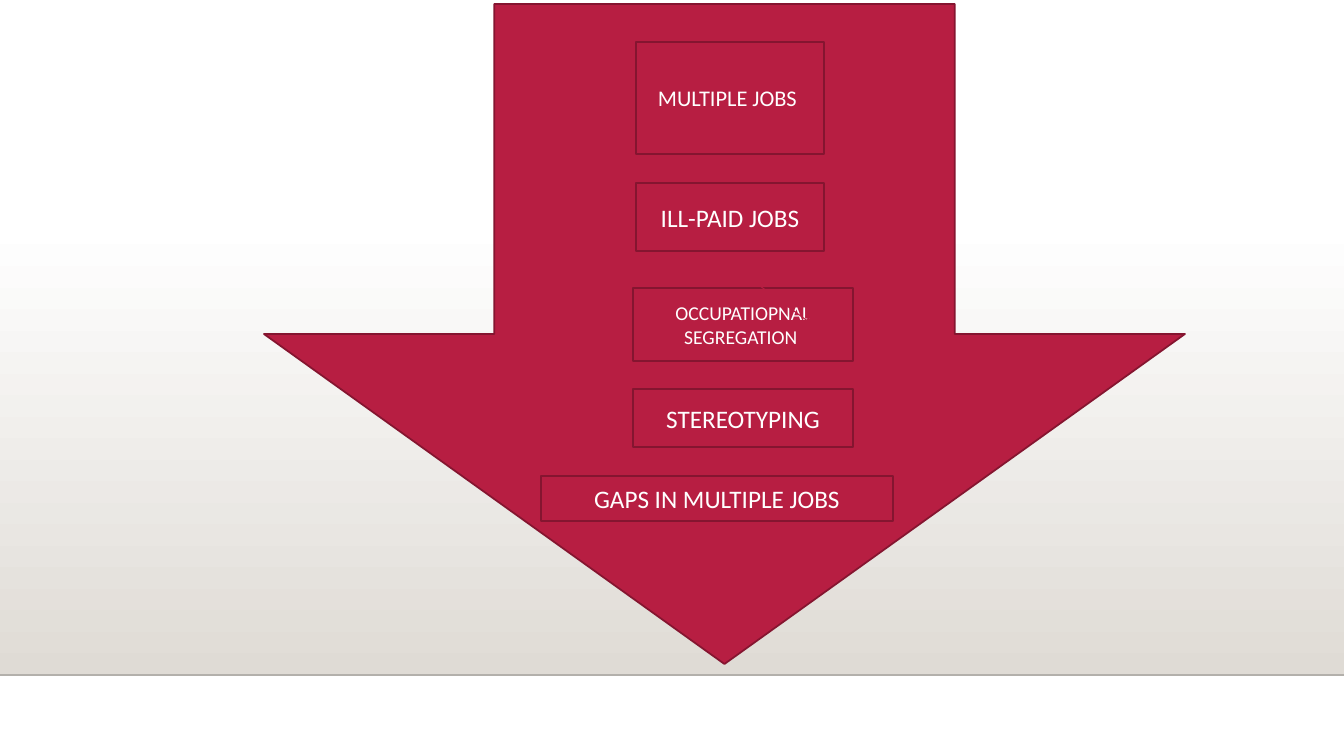
from lxml import etree
from pptx import Presentation
from pptx.dml.color import RGBColor
from pptx.enum.shapes import MSO_CONNECTOR, MSO_SHAPE
from pptx.enum.text import MSO_ANCHOR, PP_ALIGN
from pptx.oxml.ns import qn
from pptx.util import Emu, Pt

RECTANGLE = MSO_SHAPE.RECTANGLE
DOWN_ARROW = MSO_SHAPE.DOWN_ARROW
STRAIGHT = MSO_CONNECTOR.STRAIGHT
CENTER = PP_ALIGN.CENTER
MIDDLE = MSO_ANCHOR.MIDDLE

SLIDE_WIDTH, SLIDE_HEIGHT = 1344, 756
EMU_PER_PX = 12192000 / SLIDE_WIDTH
FLOOR_TOP, FLOOR_BOTTOM = 223, 675
FONT = "Calibri"
COLORS = {
    "white": "FFFFFF",
    "stone": "DFDBD5",
    "floor_edge": "B3B0AB",
    "crimson": "B71E42",
    "crimson_dark": "851530",
}
LOWER_LABELS = [
    ("OCCUPATIOPNAL SEGREGATION ", 14, (633, 288, 220, 73)),
    ("STEREOTYPING", 18, (633, 389, 220, 58)),
    ("GAPS IN MULTIPLE JOBS", 18, (541, 476, 352, 45)),
]
UPPER_LABELS = [
    ("ILL-PAID JOBS", 18, (636, 183, 188, 68)),
    ("MULTIPLE JOBS ", 16, (636, 42, 188, 112)),
]


def px(value):
    return Emu(round(value * EMU_PER_PX))


def color(name):
    return RGBColor.from_string(COLORS[name])


def add_backdrop(page):
    floor = page.shapes.add_shape(
        RECTANGLE, 0, px(FLOOR_TOP), px(SLIDE_WIDTH), px(FLOOR_BOTTOM - FLOOR_TOP)
    )
    floor.shadow.inherit = False
    floor.line.fill.background()
    floor.fill.gradient()
    floor.fill.gradient_angle = 270
    for stop, name in zip(floor.fill.gradient_stops, ("white", "stone")):
        stop.color.rgb = color(name)
    add_line(page, (0, FLOOR_BOTTOM), (SLIDE_WIDTH, FLOOR_BOTTOM), "floor_edge", 1)


def add_line(page, start, end, color_name, width):
    points = [px(value) for value in (*start, *end)]
    connector = page.shapes.add_connector(STRAIGHT, *points)
    connector.line.color.rgb = color(color_name)
    connector.line.width = Pt(width)
    etree.SubElement(connector._element.spPr, qn("a:effectLst"))
    return connector


def add_arrow_line(page, start, end, color_name, width):
    connector = add_line(page, start, end, color_name, width)
    outline = connector.line._get_or_add_ln()
    etree.SubElement(outline, qn("a:tailEnd"), type="triangle")


def add_crimson_shape(page, kind, bounds):
    shape = page.shapes.add_shape(kind, *[px(value) for value in bounds])
    shape.shadow.inherit = False
    shape.fill.solid()
    shape.fill.fore_color.rgb = color("crimson")
    shape.line.color.rgb = color("crimson_dark")
    shape.line.width = Pt(1.25)
    return shape


def add_label(page, text, size, bounds):
    box = add_crimson_shape(page, RECTANGLE, bounds)
    frame = box.text_frame
    frame.word_wrap = True
    frame.vertical_anchor = MIDDLE
    para = frame.paragraphs[0]
    para.text = text
    para.alignment = CENTER
    para.font.name = FONT
    para.font.size = Pt(size)
    para.font.color.rgb = color("white")


def main():
    deck = Presentation()
    deck.slide_width = px(SLIDE_WIDTH)
    deck.slide_height = px(SLIDE_HEIGHT)
    page = deck.slides.add_slide(deck.slide_layouts[6])
    add_backdrop(page)
    add_crimson_shape(page, DOWN_ARROW, (264, 4, 921, 660))
    for label in LOWER_LABELS:
        add_label(page, *label)
    add_arrow_line(page, (714, 252), (813, 325), "crimson", 0.75)
    for label in UPPER_LABELS:
        add_label(page, *label)
    deck.save("out.pptx")


if __name__ == "__main__":
    main()
